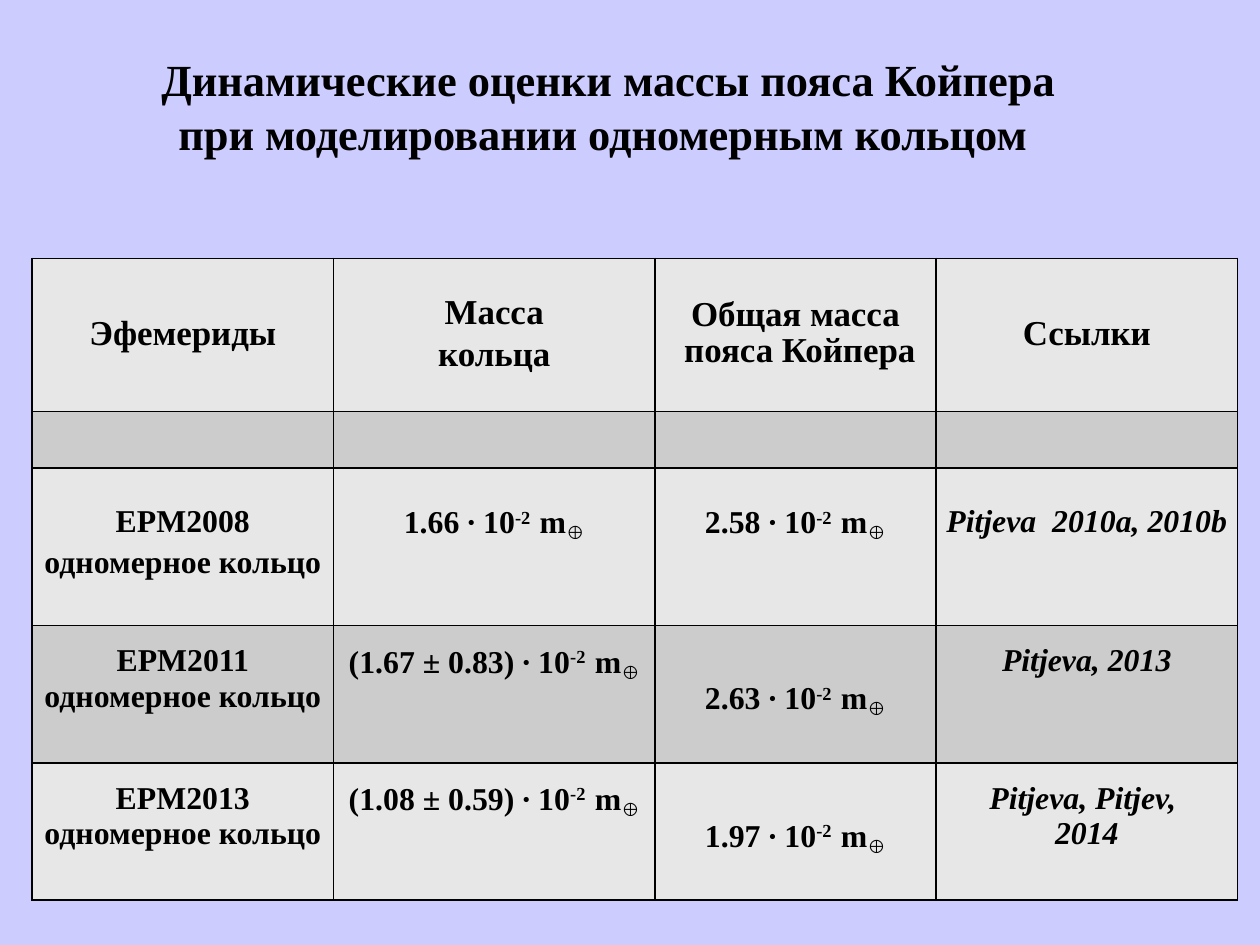
import pptx
import pptx.dml.color
import pptx.enum.text
import pptx.oxml
import pptx.oxml.ns
import pptx.util
from pptx.util import Inches, Pt

RGBColor = pptx.dml.color.RGBColor
PP_ALIGN = pptx.enum.text.PP_ALIGN
MSO_ANCHOR = pptx.enum.text.MSO_ANCHOR

BACKGROUND = RGBColor(0xCC, 0xCC, 0xFF)
LIGHT = RGBColor(0xE7, 0xE7, 0xE7)
DARK = RGBColor(0xCC, 0xCC, 0xCC)
BLACK = RGBColor(0, 0, 0)
FONT = "Times New Roman"
LINE_HEIGHT = 1.11  # height of a single line relative to the font size

TITLE = ["Динамические оценки массы пояса Койпера",
         "при моделировании одномерным кольцом "]
HEADERS = [["Эфемериды"], ["Масса", "кольца"],
           ["Общая масса", " пояса Койпера"], ["Ссылки"]]
RING = "одномерное кольцо"
# ephemeris, ring mass, total mass (both in 10⁻² Earth masses), references
ESTIMATES = [
    ("EPM2008", "1.66", "2.58", ["Pitjeva  2010a, 2010b"]),
    ("EPM2011", "(1.67 ± 0.83)", "2.63", ["Pitjeva, 2013"]),
    ("EPM2013", "(1.08 ± 0.59)", "1.97", ["Pitjeva, Pitjev, ", "2014"]),
]
COLUMN_WIDTHS = [2.64, 2.81, 2.46, 2.64]
ROW_HEIGHTS = [1.34, 0.43, 1.38, 1.2, 1.2]


def mass_runs(value):
    """Runs of a mass as (text, baseline shift in 1/1000 %)."""
    return [(value + " ∙ 10", 0), ("-2  ", 30000), ("m", 0), ("⊕", -19000)]


def write(tf, lines, size, spacing=1.0, italic=False, gap=0):
    """Fill a frame with centred paragraphs; a line is a text or a list of runs."""
    for i, line in enumerate(lines):
        p = tf.paragraphs[0] if i == 0 else tf.add_paragraph()
        p.alignment = PP_ALIGN.CENTER
        p.line_spacing = spacing
        if i:
            p.space_before = Pt(gap)
        runs = [(line, 0)] if isinstance(line, str) else line
        for text, shift in runs:
            r = p.add_run()
            r.text = text
            r.font.name = FONT
            r.font.size = Pt(size)
            r.font.bold = True
            r.font.italic = italic
            r.font.color.rgb = BLACK
            if shift:
                r._r.get_or_add_rPr().set("baseline", str(shift))


def add_borders(cell):
    tcPr = cell._tc.get_or_add_tcPr()
    for i, side in enumerate("LRTB"):
        tcPr.insert(i, pptx.oxml.parse_xml(
            f'<a:ln{side} {pptx.oxml.ns.nsdecls("a")} w="12700"><a:solidFill>'
            f'<a:srgbClr val="{BLACK}"/></a:solidFill></a:ln{side}>'))


def fill_cell(cell, lines, size, spacing, top, bottom=0, italic=False):
    cell.margin_left = cell.margin_right = Inches(0.08)
    cell.margin_top, cell.margin_bottom = Inches(top), Inches(bottom)
    gap = round(size * LINE_HEIGHT * spacing, 1)
    write(cell.text_frame, lines, size, spacing, italic, gap)


prs = pptx.Presentation()
prs.slide_width, prs.slide_height = Pt(793.75), Pt(595.25)
s = prs.slides.add_slide(prs.slide_layouts[6])
s.background.fill.solid()
s.background.fill.fore_color.rgb = BACKGROUND

table = s.shapes.add_table(
    len(ROW_HEIGHTS), len(COLUMN_WIDTHS), Inches(0.28), Inches(2.26),
    Inches(sum(COLUMN_WIDTHS)), Inches(sum(ROW_HEIGHTS))).table
table.first_row = table.horz_banding = False
for column, width in zip(table.columns, COLUMN_WIDTHS):
    column.width = Inches(width)
for i, (row, height) in enumerate(zip(table.rows, ROW_HEIGHTS)):
    row.height = Inches(height)
    for cell in row.cells:
        cell.fill.solid()
        cell.fill.fore_color.rgb = DARK if i % 2 else LIGHT
        add_borders(cell)

for j, lines in enumerate(HEADERS):
    cell = table.cell(0, j)
    cell.vertical_anchor = MSO_ANCHOR.MIDDLE
    fill_cell(cell, lines, 22, 0.47 if j == 2 else 0.54, 0.12, 0.05)
    table.cell(1, j).margin_top = Inches(0.14)

for i, (ephemeris, ring, total, references) in enumerate(ESTIMATES):
    first = i == 0
    spacing, top = (0.58, 0.42) if first else (0.5, 0.28)
    total_top = top if first else 0.58  # lower rows set the total mass one line down
    cells = table.rows[i + 2].cells
    fill_cell(cells[0], [ephemeris, RING], 20, spacing, top)
    fill_cell(cells[1], [mass_runs(ring)], 20, spacing, top)
    fill_cell(cells[2], [mass_runs(total)], 20, 0.58, total_top)
    fill_cell(cells[3], references, 20, spacing, top, italic=True)

title = s.shapes.add_textbox(Inches(1.06), Inches(0.41), Inches(8.52), Inches(1.04))
title.text_frame.word_wrap = True
write(title.text_frame, TITLE, 28)

prs.save("out.pptx")
